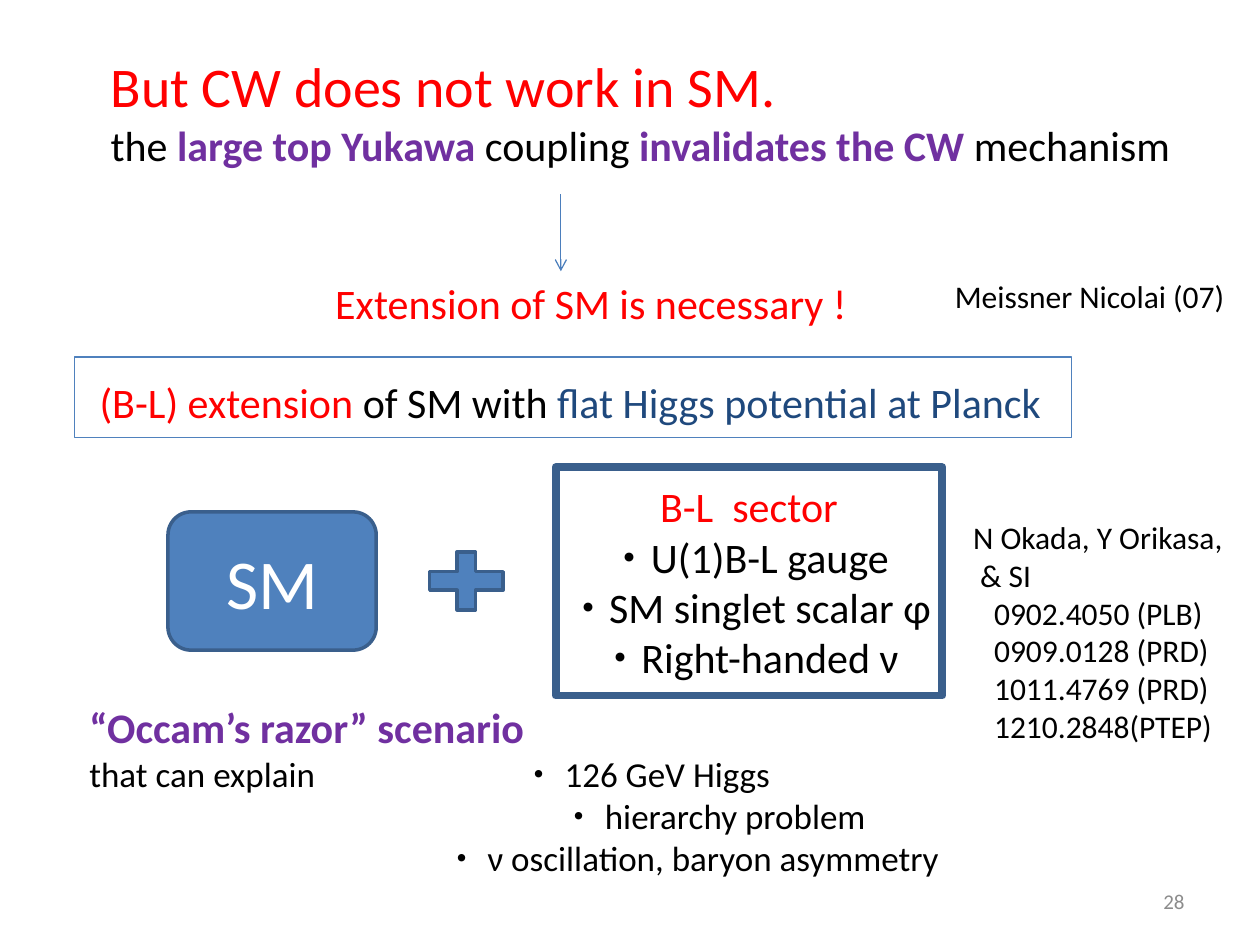
from lxml.etree import SubElement
from pptx import Presentation
from pptx.dml.color import RGBColor
from pptx.enum.shapes import MSO_CONNECTOR, MSO_SHAPE
from pptx.enum.text import MSO_ANCHOR, MSO_AUTO_SIZE, PP_ALIGN
from pptx.oxml.ns import qn
from pptx.util import Pt

COLORS = {
    "red": "FF0000", "purple": "7030A0", "black": "000000", "navy": "1F497D",
    "blue": "4F81BD", "edge": "3A5F8C", "arrow": "4B7EBC",
    "white": "FFFFFF", "grey": "8C8C8C",
}
FONT = "Calibri"


def color(name):
    return RGBColor.from_string(COLORS[name])


def write(shape, paragraphs, size, align=PP_ALIGN.LEFT, anchor=MSO_ANCHOR.TOP,
          wrap=True):
    """Each paragraph is a list of (text, color name, bold) runs."""
    frame = shape.text_frame
    frame.auto_size = MSO_AUTO_SIZE.NONE
    frame.word_wrap = wrap
    frame.vertical_anchor = anchor
    frame.margin_left, frame.margin_right = Pt(7.2), 0
    frame.margin_top = frame.margin_bottom = Pt(3.6)
    if align != PP_ALIGN.LEFT:
        frame.margin_right = Pt(7.2)
    for index, runs in enumerate(paragraphs):
        paragraph = frame.paragraphs[0] if index == 0 else frame.add_paragraph()
        paragraph.alignment = align
        for text, color_name, bold in runs:
            run = paragraph.add_run()
            run.text = text
            run.font.name = FONT
            run.font.size = Pt(size)
            run.font.bold = bold
            run.font.color.rgb = color(color_name)
            # Same font for the East Asian middle dots
            SubElement(run._r.get_or_add_rPr(), qn("a:ea"), typeface=FONT)
    return frame


def plain(lines, color_name="black"):
    return [[(line, color_name, False)] for line in lines]


def set_size(paragraph, size):
    for run in paragraph.runs:
        run.font.size = Pt(size)


def set_indent(paragraph, indent):
    properties = paragraph._p.get_or_add_pPr()
    properties.set("marL", str(Pt(indent)))
    properties.set("indent", "0")


def add_text(slide, box, paragraphs, size, **options):
    shape = slide.shapes.add_textbox(*map(Pt, box))
    return write(shape, paragraphs, size, **options)


def add_block(slide, kind, box, fill, line, width):
    shape = slide.shapes.add_shape(kind, *map(Pt, box))
    shape.shadow.inherit = False
    if fill:
        shape.fill.solid()
        shape.fill.fore_color.rgb = color(fill)
    else:
        shape.fill.background()
    shape.line.color.rgb = color(line)
    shape.line.width = Pt(width)
    return shape


def add_title(slide, box):
    title = slide.shapes.title
    title.left, title.top, title.width, title.height = map(Pt, box)
    frame = write(title, [
        [("But CW does not work in SM.", "red", False)],
        [("the ", "black", False), ("large top Yukawa ", "purple", True),
         ("coupling ", "black", False), ("invalidates the CW ", "purple", True),
         ("mechanism", "black", False)],
    ], 24)
    set_size(frame.paragraphs[0], 32)


def add_conclusion(slide, box):
    """Down arrow above the conclusion, with its reference at the right."""
    left, top, width, height = box
    x, text_top = left + 136, top + 44
    arrow = slide.shapes.add_connector(
        MSO_CONNECTOR.STRAIGHT, Pt(x), Pt(top), Pt(x), Pt(text_top))
    arrow.line.color.rgb = color("arrow")
    arrow.line.width = Pt(0.75)
    SubElement(arrow.line._get_or_add_ln(), qn("a:tailEnd"), type="arrow")
    SubElement(arrow._element.spPr, qn("a:effectLst"))

    add_text(slide, (left, text_top, 310, height - 44),
             plain(["Extension of SM is necessary !"], "red"), 24)
    add_text(slide, (left + width - 171, text_top, 171, 29),
             plain(["Meissner Nicolai (07)"]), 18, wrap=False)


def add_proposal(slide, box):
    shape = add_block(slide, MSO_SHAPE.RECTANGLE, box, None, "blue", 0.75)
    frame = write(shape, [[
        ("(B-L) extension ", "red", False), ("of SM with ", "black", False),
        ("flat Higgs potential at Planck", "navy", False),
    ]], 24)
    frame.margin_left, frame.margin_top = Pt(14.4), Pt(11.2)


def add_model(slide, box):
    """SM plus the B-L sector."""
    left, top, width, height = box
    centered = {"align": PP_ALIGN.CENTER, "anchor": MSO_ANCHOR.MIDDLE,
                "wrap": False}

    standard = add_block(slide, MSO_SHAPE.ROUNDED_RECTANGLE,
                         (left, top + 25.5, 119, 79), "blue", "edge", 2)
    write(standard, plain(["SM"], "white"), 40, **centered)

    add_block(slide, MSO_SHAPE.MATH_PLUS,
              (left + 142, top + 42.5, 57, 45), "blue", "edge", 2)

    sector = add_block(slide, MSO_SHAPE.RECTANGLE,
                       (left + width - 221, top, 221, height), None, "edge", 4.5)
    frame = write(sector, plain(["B-L  sector"], "red") + plain(
        ["・U(1)B-L gauge", "・SM singlet scalar φ", "・Right-handed ν"]),
        24, **centered)
    frame.margin_left = frame.margin_right = 0


def add_references(slide, box):
    frame = add_text(slide, box, plain([
        "N Okada, Y Orikasa,", "& SI", "0902.4050 (PLB)", "0909.0128 (PRD)",
        "1011.4769 (PRD)", "1210.2848(PTEP)"]), 18, wrap=False)
    for paragraph, indent in zip(frame.paragraphs, (0, 4, 12, 12, 12, 12)):
        set_indent(paragraph, indent)


def add_scenario(slide, box):
    frame = add_text(slide, box, [
        [("“Occam’s razor” scenario", "purple", True)]] + plain([
            "that can explain\t・ 126 GeV Higgs", "・ hierarchy problem",
            "・ ν oscillation, baryon asymmetry"]), 20)
    heading, first, second, third = frame.paragraphs
    set_size(heading, 24)
    tabs = SubElement(first._p.get_or_add_pPr(), qn("a:tabLst"))
    SubElement(tabs, qn("a:tab"), pos=str(Pt(247)), algn="l")
    set_indent(second, 270)
    set_indent(third, 203)


def main():
    presentation = Presentation()
    presentation.slide_width, presentation.slide_height = Pt(720), Pt(540)
    slide = presentation.slides.add_slide(presentation.slide_layouts[5])

    add_title(slide, (56, 26, 626, 75))
    add_conclusion(slide, (184.5, 111, 525, 80))
    add_proposal(slide, (42.5, 204, 570, 46))
    add_model(slide, (96, 267, 442.5, 130.5))
    add_references(slide, (549, 292.5, 163, 138))
    add_scenario(slide, (44, 397.5, 510, 109))
    # Slide number
    add_text(slide, (516, 500.5, 168, 28.5), plain(["28"], "grey"), 12,
             align=PP_ALIGN.RIGHT, anchor=MSO_ANCHOR.MIDDLE)

    presentation.save("out.pptx")


if __name__ == "__main__":
    main()
